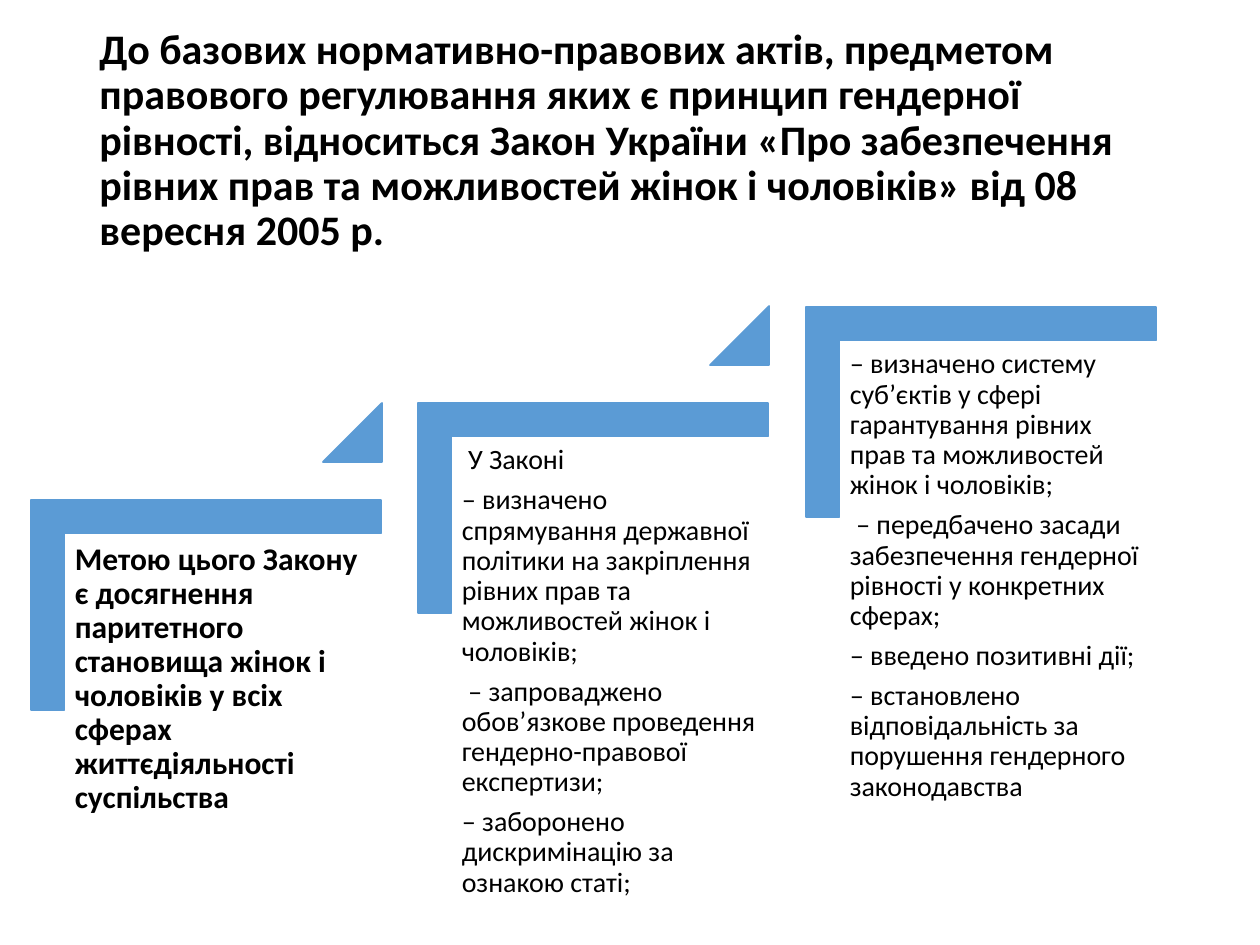
from pptx import Presentation
from pptx.dml.color import RGBColor
from pptx.enum.shapes import MSO_SHAPE
from pptx.enum.text import MSO_ANCHOR
from pptx.util import Emu, Inches, Pt

PX = 914400 / 126
BLUE = RGBColor(0x5B, 0x9B, 0xD5)
BLACK = RGBColor(0, 0, 0)
FONT = "Calibri"

TITLE = (
    "До базових нормативно-правових актів, предметом правового регулювання "
    "яких є принцип гендерної рівності, відноситься Закон України «Про "
    "забезпечення рівних прав та можливостей жінок і чоловіків» від 08 "
    "вересня 2005 р."
)
STEPS = [
    (18, True, [
        "Метою цього Закону є досягнення паритетного становища жінок і "
        "чоловіків у всіх сферах життєдіяльності суспільства",
    ]),
    (16, False, [
        " У Законі",
        "‒ визначено спрямування державної політики на закріплення рівних "
        "прав та можливостей жінок і чоловіків;",
        " ‒ запроваджено обов’язкове проведення гендерно-правової експертизи;",
        "‒ заборонено дискримінацію за ознакою статі;",
    ]),
    (16, False, [
        "‒ визначено систему суб’єктів у сфері гарантування рівних прав та "
        "можливостей жінок і чоловіків;",
        " ‒ передбачено засади забезпечення гендерної рівності у конкретних "
        "сферах;",
        "‒ введено позитивні дії;",
        "‒ встановлено відповідальність за порушення гендерного законодавства",
    ]),
]


def px(*lengths):
    """Turn pixel lengths into EMU."""
    return [Emu(round(n * PX)) for n in lengths]


def add_text(s, box, paragraphs, size, bold, inset, anchor, after=0):
    """Place wrapped black paragraphs in a box."""
    tf = s.shapes.add_textbox(*px(*box)).text_frame
    tf.word_wrap = True
    tf.vertical_anchor = anchor
    tf.margin_left = tf.margin_right = Inches(inset)
    tf.margin_top = tf.margin_bottom = Inches(min(inset, 0.07))
    for i, text in enumerate(paragraphs):
        p = tf.add_paragraph() if i else tf.paragraphs[0]
        p.text = text
        p.line_spacing = 0.9
        p.space_after = Pt(after)
        p.font.name = FONT
        p.font.size = Pt(size)
        p.font.bold = bold
        p.font.color.rgb = BLACK


def add_blue_shape(s, kind, box, adjustments):
    """Place a blue preset shape with the given adjustments."""
    sp = s.shapes.add_shape(kind, *px(*box))
    sp.shadow.inherit = False
    sp.fill.solid()
    sp.fill.fore_color.rgb = BLUE
    sp.line.color.rgb = BLUE
    sp.line.width = Pt(1)
    for i, value in enumerate(adjustments):
        sp.adjustments[i] = value
    return sp


def add_step(s, box, size, bold, paragraphs, rising):
    """Draw one stair step: corner, text and a triangle if another follows."""
    x, y, w, h = box
    turn = (w - h) // 2
    corner = add_blue_shape(s, MSO_SHAPE.CORNER, (x + turn, y - turn, h, w),
                            (0.16, 0.16))
    corner.rotation = 90
    add_text(s, (x + 35, y + 34, w - 34, 277), paragraphs, size, bold, 0.07,
             MSO_ANCHOR.TOP, size * 0.35)
    if rising:
        add_blue_shape(s, MSO_SHAPE.ISOSCELES_TRIANGLE,
                       (x + w - 58, y - 97, 59, 59), (1,))


def add_staircase(s, box, step_w, step_h):
    """Spread the steps evenly from the lower left to the upper right."""
    x, y, w, h = box
    last = len(STEPS) - 1
    for i, (size, bold, paragraphs) in enumerate(STEPS):
        left = x + (w - step_w) * i // last
        top = y + (h - step_h) * (last - i) // last
        add_step(s, (left, top, step_w, step_h), size, bold, paragraphs,
                 i < last)


def main():
    """Build and save the slide."""
    prs = Presentation()
    prs.slide_width, prs.slide_height = Inches(10), Inches(7.5)
    s = prs.slides.add_slide(prs.slide_layouts[6])
    add_text(s, (87, 50, 1086, 183), [TITLE], 24, True, 0.1,
             MSO_ANCHOR.MIDDLE)
    add_staircase(s, (31, 307, 1125, 403), 350, 210)
    prs.save("out.pptx")


if __name__ == "__main__":
    main()
